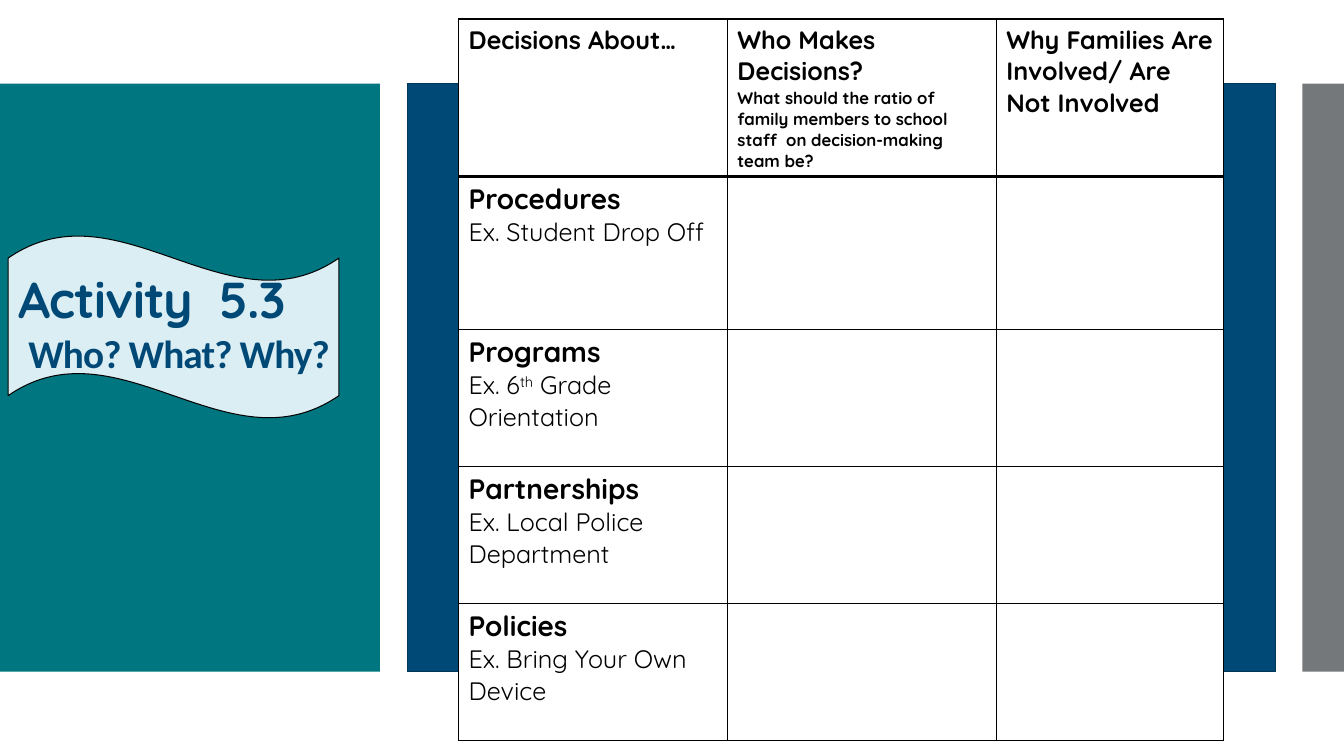
from lxml.etree import SubElement
from pptx import Presentation
from pptx.dml.color import RGBColor
from pptx.enum.shapes import MSO_SHAPE
from pptx.enum.text import MSO_ANCHOR, MSO_AUTO_SIZE, PP_ALIGN
from pptx.oxml import parse_xml
from pptx.oxml.ns import nsdecls, qn
from pptx.util import Pt

NAVY = RGBColor(0x00, 0x49, 0x76)
NAVY_EDGE = RGBColor(0x00, 0x36, 0x57)
TEAL = RGBColor(0x00, 0x76, 0x81)
GREY = RGBColor(0x75, 0x78, 0x7B)
PALE = RGBColor(0xDA, 0xEE, 0xF3)
BLACK = RGBColor(0, 0, 0)
WHITE = RGBColor(255, 255, 255)

# Content: title runs are (text, font, size); None breaks the line
TITLE = [("Activity  5.3", "Quicksand", 36), None,
         (" ", "Calibri", 32), ("Who? What? Why?", "Calibri", 28)]

# Each heading is a list of (text, size) paragraphs
HEADINGS = [
    [("Decisions About…", 18)],
    [("Who Makes Decisions?", 18),
     ("What should the ratio of family members to school staff  on "
      "decision-making team be?", 12)],
    [("Why Families Are Involved/ Are Not Involved", 18)],
]
# Topic, then the runs of its example as (text, superscript)
TOPICS = [
    ("Procedures", [("Ex. Student Drop Off", False)]),
    ("Programs", [("Ex. 6", False), ("th", True),
                  (" Grade Orientation", False)]),
    ("Partnerships", [("Ex. Local Police Department", False)]),
    ("Policies", [("Ex. Bring Your Own Device", False)]),
]

# Geometry in points: left, width, fill, line
BAND_TOP, BAND_HEIGHT = 59.8, 420
BANDS = [(291, 620, NAVY, NAVY_EDGE), (0, 271.4, TEAL, None),
         (930.4, 29.6, GREY, None)]
WAVE = (5.8, 168, 236.2, 131)
TABLE_LEFT, TABLE_TOP = 327.5, 13.6
COLS = [192.1, 192.1, 162.1]
ROWS = [112.5, 109.3, 97.9, 97.9, 97.9]


def add_panel(s, kind, box, fill, line, width=0.75):
    sp = s.shapes.add_shape(kind, *map(Pt, box))
    sp.shadow.inherit = False
    sp.fill.solid()
    sp.fill.fore_color.rgb = fill
    if line is None:
        sp.line.fill.background()
    else:
        sp.line.color.rgb = line
        sp.line.width = Pt(width)
    return sp


def add_run(p, text, size, bold=True, font="Quicksand", color=BLACK):
    r = p.add_run()
    r.text = text
    r.font.name = font
    r.font.size = Pt(size)
    r.font.bold = bold
    r.font.color.rgb = color
    return r


def style_cell(cell, top, bottom):
    cell.fill.solid()
    cell.fill.fore_color.rgb = WHITE
    tcPr = cell._tc.get_or_add_tcPr()
    sides = [("lnL", 1), ("lnR", 1), ("lnT", top), ("lnB", bottom)]
    for i, (side, width) in enumerate(sides):
        ln = parse_xml(f'<a:{side} {nsdecls("a")} w="{Pt(width)}"/>')
        fill = SubElement(ln, qn("a:solidFill"))
        SubElement(fill, qn("a:srgbClr")).set("val", str(BLACK))
        tcPr.insert(i, ln)


prs = Presentation()
prs.slide_width, prs.slide_height = Pt(960), Pt(540)
s = prs.slides.add_slide(prs.slide_layouts[5])

# Background bands and the wave behind the title
for left, width, fill, line in BANDS:
    add_panel(s, MSO_SHAPE.RECTANGLE, (left, BAND_TOP, width, BAND_HEIGHT),
              fill, line, 0.85)
add_panel(s, MSO_SHAPE.WAVE, WAVE, PALE, BLACK)

# Title, brought in front of the wave
title = s.shapes.title
s.shapes._spTree.append(title._element)
left, top, width, height = WAVE
title.left, title.top = Pt(left), Pt(top)
title.width, title.height = Pt(254), Pt(height)
tf = title.text_frame
tf.word_wrap = True
tf.auto_size = MSO_AUTO_SIZE.NONE
tf.vertical_anchor = MSO_ANCHOR.MIDDLE
p = tf.paragraphs[0]
p.alignment = PP_ALIGN.LEFT
p.line_spacing = 0.9
for part in TITLE:
    if part is None:
        p.add_line_break()
        continue
    text, font, size = part
    r = add_run(p, text, size, font=font, color=NAVY)
    r.font._element.set("spc", "-60")

# Decision table
table = s.shapes.add_table(len(ROWS), len(COLS), Pt(TABLE_LEFT), Pt(TABLE_TOP),
                           Pt(sum(COLS)), Pt(sum(ROWS))).table
for col, width in zip(table.columns, COLS):
    col.width = Pt(width)
for i, (row, height) in enumerate(zip(table.rows, ROWS)):
    row.height = Pt(height)
    for cell in row.cells:
        style_cell(cell, top=2 if i == 1 else 1, bottom=2 if i == 0 else 1)

for i, paragraphs in enumerate(HEADINGS):
    tf = table.cell(0, i).text_frame
    for j, (text, size) in enumerate(paragraphs):
        p = tf.add_paragraph() if j else tf.paragraphs[0]
        add_run(p, text, size)

for i, (topic, example) in enumerate(TOPICS, 1):
    tf = table.cell(i, 0).text_frame
    add_run(tf.paragraphs[0], topic, 20)
    p = tf.add_paragraph()
    for text, superscript in example:
        r = add_run(p, text, 18, bold=False)
        if superscript:
            r.font._element.set("baseline", "30000")

prs.save("out.pptx")
